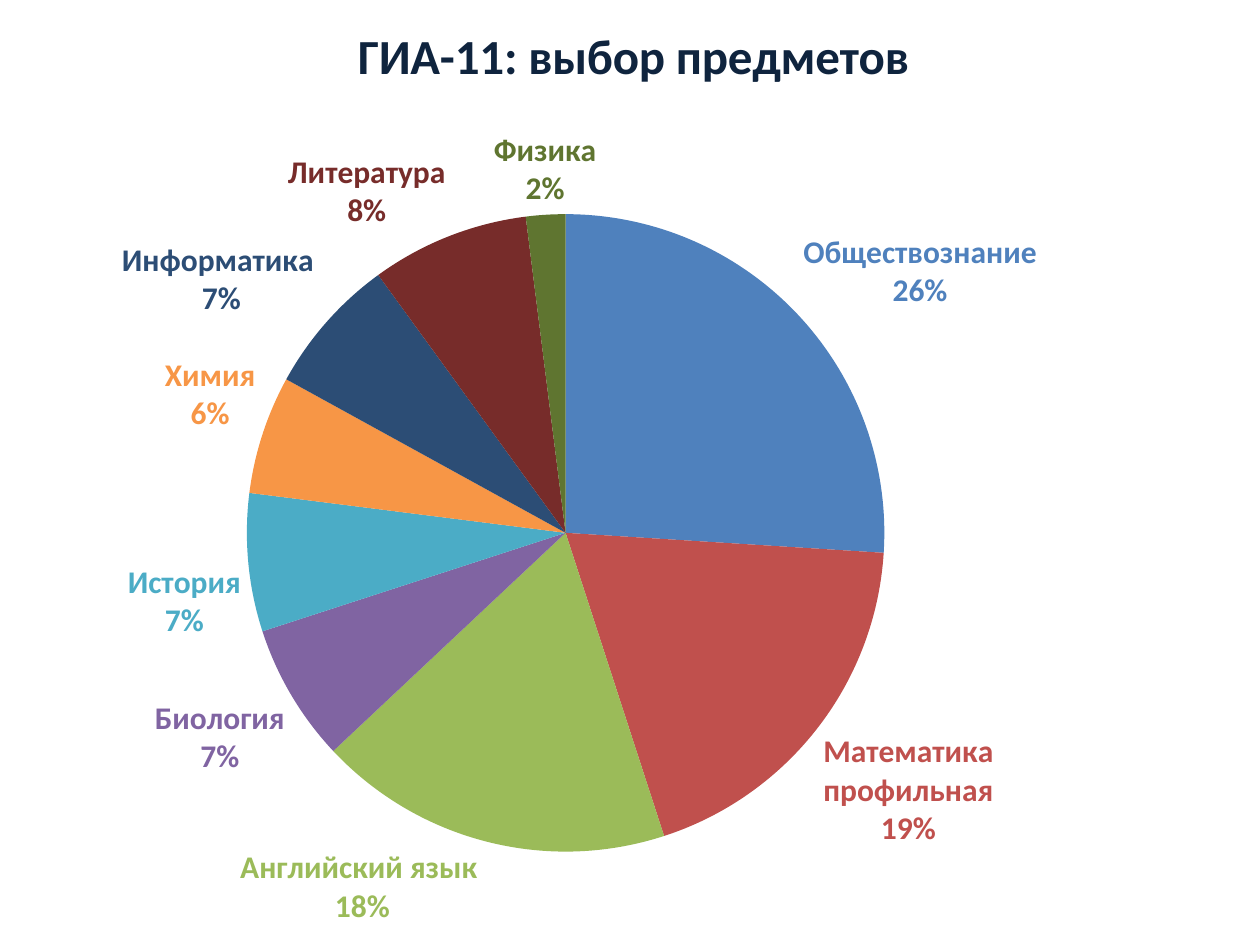
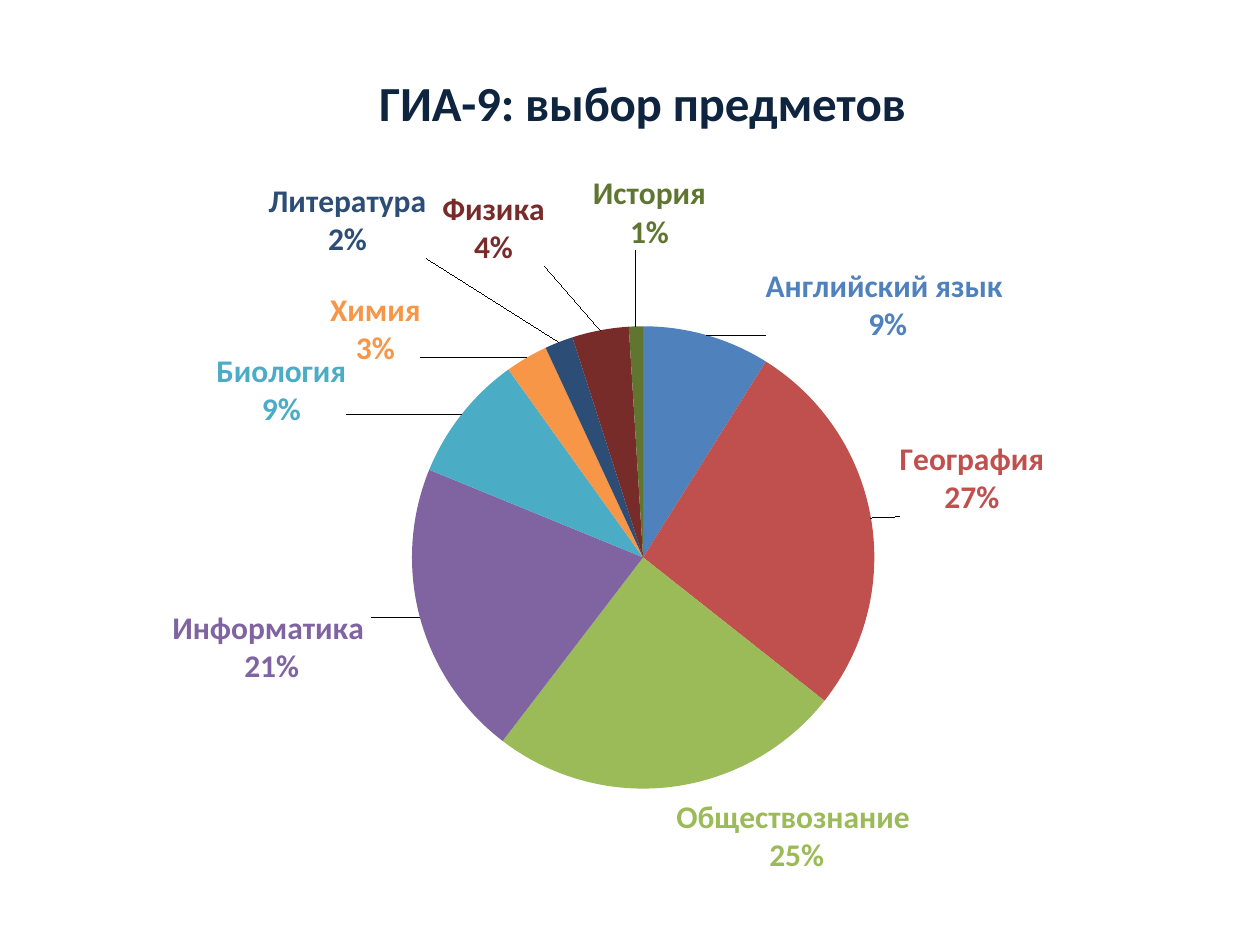
from dataclasses import dataclass

from lxml import etree
from pptx import Presentation
from pptx import util as u
from pptx.chart.data import CategoryChartData
from pptx.dml.color import RGBColor
from pptx.enum import chart as ch
from pptx.oxml.ns import qn


@dataclass(frozen=True)
class Theme:
    """Colours, font and type sizes of the deck."""

    font: str = "Calibri"
    title: str = "0F243E"
    base: str = "000000"
    slices: tuple = ("4F81BD", "C0504D", "9BBB59", "8064A2", "4BACC6",
                     "F79646", "2C4D75", "772C2A", "5F7530")
    title_size: int = 28
    label_size: int = 18
    base_size: int = 10


THEME = Theme()

EXAM_11 = dict(
    name="ГИА-11: выбор предметов",
    box=(-0.75, 0, 10.47, 7.5),
    head=(3.52, 0.11),
    pie=(2.71, 1.7, 5.06),
    rows=[("Обществознание", 26), ("Математика профильная", 19),
          ("Английский язык ", 18), ("Биология", 7), ("История", 7),
          ("Химия", 6), ("Информатика ", 7), ("Литература", 8),
          ("Физика", 2)],
    shifts=[],
)

EXAM_9 = dict(
    name="ГИА-9: выбор предметов",
    box=(0.12, 0, 9.88, 7.5),
    head=(2.82, 0.48),
    pie=(3.15, 2.59, 3.67),
    rows=[("Английский язык ", 9), ("География", 27),
          ("Обществознание ", 25), ("Информатика ", 21), ("Биология", 9),
          ("Химия", 3), ("Литература", 2), ("Физика", 4), ("История", 1)],
    shifts=[(0.45, 0.12), (0.17, 0), (0.03, 0.03), (-0.33, -0.08),
            (-0.87, 0.15), (-0.81, 0.13), (-1.03, -0.61), (-0.43, -0.45),
            (0.11, -0.54)],
)


def style(font, size, color, bold=False):
    """Set the format of a font."""
    font.name = THEME.font
    font.size = u.Pt(size)
    font.bold = bold
    font.color.rgb = RGBColor.from_string(color)


def write(frame, words, **look):
    """Put words into a text frame with the given format."""
    frame.text = words
    style(frame.paragraphs[0].runs[0].font, **look)


def node(tag, val):
    """Make a chart element with a val attribute."""
    item = etree.Element(qn(f"c:{tag}"))
    item.set("val", str(val))
    return item


def place(owner, index, box, inner=False, **spots):
    """Give a chart part a manual layout from lengths in inches."""
    for old in owner.findall(qn("c:layout")):
        owner.remove(old)
    layout = etree.Element(qn("c:layout"))
    manual = etree.SubElement(layout, qn("c:manualLayout"))
    if inner:
        manual.append(node("layoutTarget", "inner"))
    if owner.tag != qn("c:dLbl"):
        manual.extend([node("xMode", "edge"), node("yMode", "edge")])
    for key, size in spots.items():
        whole = box[2] if key in "xw" else box[3]
        manual.append(node(key, round(size / whole, 4)))
    owner.insert(index, layout)


def show(owner):
    """Show name and percentage on two lines in a label element."""
    for tag in ("showLegendKey", "showVal", "showCatName", "showSerName",
                "showPercent", "showBubbleSize"):
        for old in owner.findall(qn(f"c:{tag}")):
            owner.remove(old)
        owner.append(node(tag, int(tag in ("showCatName", "showPercent"))))
    gap = etree.SubElement(owner, qn("c:separator"))
    gap.text = "\n"
    for old in owner.findall(qn("c:showLeaderLines")):
        owner.remove(old)
    if owner.tag == qn("c:dLbls"):
        owner.append(node("showLeaderLines", 1))


def mark(chart, box, shifts):
    """Colour the slices and their labels, and move the labels."""
    series = chart.plots[0].series[0]
    labels = series.data_labels
    labels.position = ch.XL_LABEL_POSITION.OUTSIDE_END
    style(labels.font, THEME.label_size, THEME.slices[0], True)
    for i, color in enumerate(THEME.slices):
        point = series.points[i]
        point.format.fill.solid()
        point.format.fill.fore_color.rgb = RGBColor.from_string(color)
        point.format.line.fill.background()
        label = point.data_label
        style(label.font, THEME.label_size, color, True)
        label.position = ch.XL_LABEL_POSITION.OUTSIDE_END
    for owner in chart.element.xpath(".//c:ser/c:dLbls"):
        show(owner)
    parts = chart.element.xpath(".//c:ser/c:dLbls/c:dLbl")
    for part in parts:
        show(part)
    for part, (dx, dy) in zip(parts, shifts):
        place(part, 1, box, x=dx, y=dy)


def draw(slide, name, box, head, pie, rows, shifts):
    """Draw a titled pie of subject choices in the given box."""
    data = CategoryChartData()
    data.categories = [row[0] for row in rows]
    data.add_series("Series 1", [row[1] for row in rows])
    frame = slide.shapes.add_chart(
        ch.XL_CHART_TYPE.PIE, *map(u.Inches, box), data)
    chart = frame.chart
    style(chart.font, THEME.base_size, THEME.base)
    chart.has_legend = False
    chart.plots[0].vary_by_categories = True
    chart.has_title = True
    write(chart.chart_title.text_frame, name, size=THEME.title_size,
          color=THEME.title, bold=True)
    place(chart.element.xpath("c:chart/c:title")[0], 1, box,
          x=head[0], y=head[1])
    left, top, side = pie
    place(chart.element.xpath("c:chart/c:plotArea")[0], 0, box, inner=True,
          x=left, y=top, w=side, h=side)
    mark(chart, box, shifts)


def main():
    """Build the deck."""
    deck = Presentation()
    deck.slide_width, deck.slide_height = u.Inches(10), u.Inches(7.5)
    for exam in (EXAM_11, EXAM_9):
        draw(deck.slides.add_slide(deck.slide_layouts[6]), **exam)
    deck.save("out.pptx")


if __name__ == "__main__":
    main()
